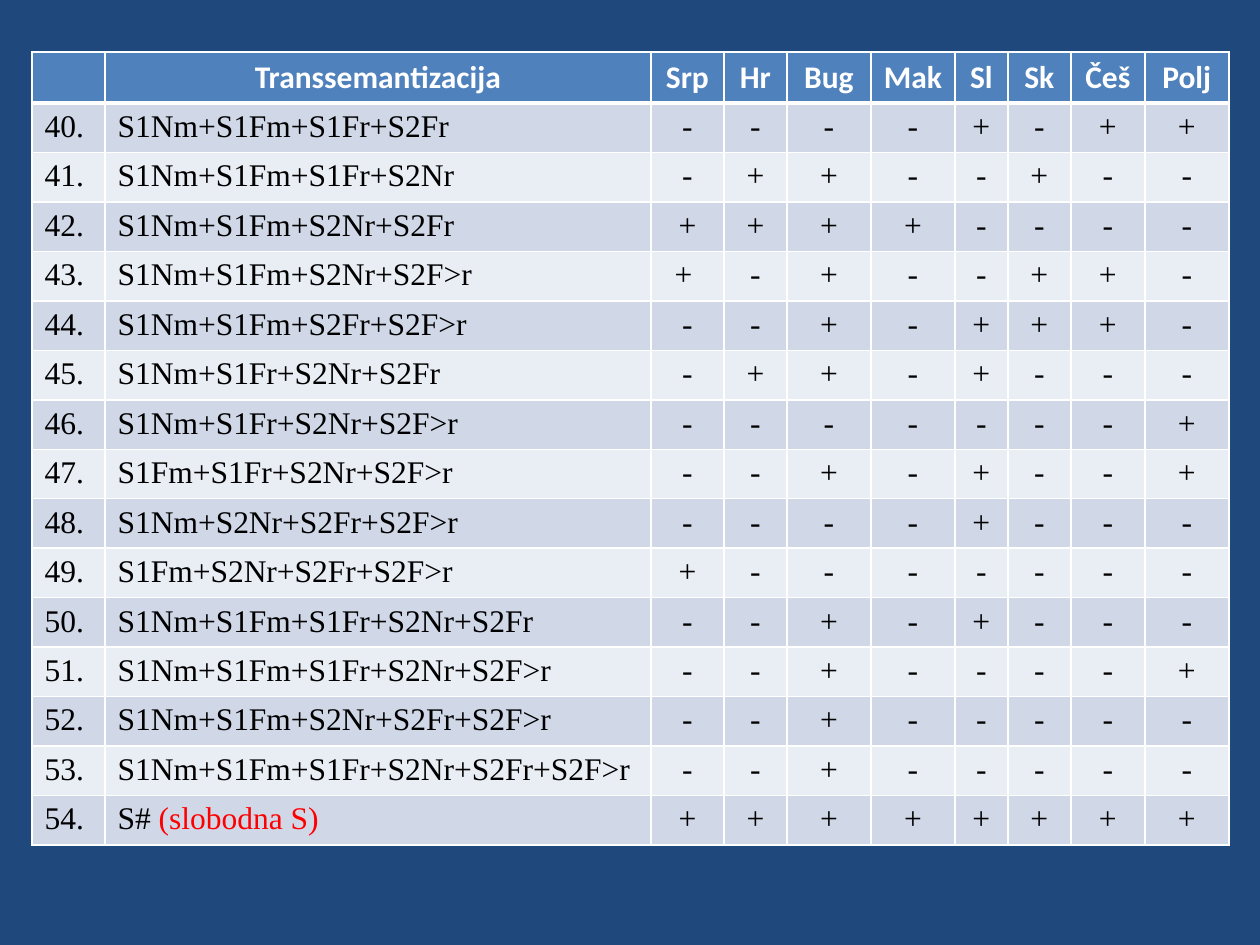
from lxml.etree import SubElement
from pptx import Presentation
from pptx.dml.color import RGBColor
from pptx.enum.text import PP_ALIGN
from pptx.oxml.ns import qn
from pptx.util import Emu, Pt

HEADER = ["", "Transsemantizacija", "Srp", "Hr", "Bug", "Mak", "Sl", "Sk", "Češ", "Polj"]
FIRST_NUMBER = 40
ROWS = [  # formula, red remark, marks per language
    ("S1Nm+S1Fm+S1Fr+S2Fr", "", "-,-,-,-,+,-,+,+"),
    ("S1Nm+S1Fm+S1Fr+S2Nr", "", "-,+,+,-,-,+,-,-"),
    ("S1Nm+S1Fm+S2Nr+S2Fr", "", "+,+,+,+,-,-,-,-"),
    ("S1Nm+S1Fm+S2Nr+S2F>r", "", "+ ,-,+,-,-,+,+,-"),
    ("S1Nm+S1Fm+S2Fr+S2F>r", "", "-,-,+,-,+,+,+,-"),
    ("S1Nm+S1Fr+S2Nr+S2Fr", "", "-,+,+,-,+,-,-,-"),
    ("S1Nm+S1Fr+S2Nr+S2F>r", "", "-,-,-,-,-,-,-,+"),
    ("S1Fm+S1Fr+S2Nr+S2F>r", "", "-,-,+,-,+,-,-,+"),
    ("S1Nm+S2Nr+S2Fr+S2F>r", "", "-,-,-,-,+,-,-,-"),
    ("S1Fm+S2Nr+S2Fr+S2F>r", "", "+,-,-,-,-,-,-,-"),
    ("S1Nm+S1Fm+S1Fr+S2Nr+S2Fr", "", "-,-,+,-,+,-,-,-"),
    ("S1Nm+S1Fm+S1Fr+S2Nr+S2F>r", "", "-,-,+,-,-,-,-,+"),
    ("S1Nm+S1Fm+S2Nr+S2Fr+S2F>r", "", "-,-,+,-,-,-,-,-"),
    ("S1Nm+S1Fm+S1Fr+S2Nr+S2Fr+S2F>r", "", "-,-,+,-,-,-,-,-"),
    ("S# ", "(slobodna S)", "+,+,+,+,+,+,+,+"),
]

COL_WIDTHS = [73, 546, 73, 63, 84, 84, 53, 63, 74, 84]
LEFT, TOP = 32, 52
HEADER_HEIGHT, BODY_HEIGHT = 51, 742

NAVY = RGBColor(0x1F, 0x49, 0x7D)
BLUE = RGBColor(0x4F, 0x81, 0xBD)
BANDS = [RGBColor(0xD0, 0xD8, 0xE8), RGBColor(0xE9, 0xED, 0xF4)]
WHITE = RGBColor(0xFF, 0xFF, 0xFF)
BLACK = RGBColor(0, 0, 0)
RED = RGBColor(0xFF, 0, 0)


def px(n):
    return Emu(round(n * 914400 / 126))


def set_borders(cell, top, bottom):
    tc_pr = cell._tc.get_or_add_tcPr()
    sides = [("a:lnL", 1), ("a:lnR", 1), ("a:lnT", top), ("a:lnB", bottom)]
    for i, (tag, width) in enumerate(sides):
        ln = SubElement(tc_pr, qn(tag), w=str(Pt(width)))
        fill = SubElement(ln, qn("a:solidFill"))
        SubElement(fill, qn("a:srgbClr"), val=str(WHITE))
        tc_pr.insert(i, ln)  # lines precede the fill


def format_run(r, font, color, bold):
    r.font.name, r.font.size = font, Pt(18)
    r.font.color.rgb, r.font.bold = color, bold


def fill_cell(cell, row, col, text, remark=""):
    header = row == 0
    cell.fill.solid()
    cell.fill.fore_color.rgb = BLUE if header else BANDS[(row - 1) % 2]
    set_borders(cell, top=3 if row == 1 else 1, bottom=3 if header else 1)
    p = cell.text_frame.paragraphs[0]
    p.text = text
    p.font.size = Pt(18)
    if header or col > 1:
        p.alignment = PP_ALIGN.CENTER
    font, color = ("Calibri", WHITE) if header else ("Times New Roman", BLACK)
    for r in p.runs:
        format_run(r, font, color, header)
    if remark:
        r = p.add_run()
        r.text = remark
        format_run(r, font, RED, False)


def main():
    prs = Presentation()
    prs.slide_width, prs.slide_height = px(1260), px(945)
    s = prs.slides.add_slide(prs.slide_layouts[6])
    s.background.fill.solid()
    s.background.fill.fore_color.rgb = NAVY

    table = s.shapes.add_table(
        len(ROWS) + 1, len(HEADER), px(LEFT), px(TOP),
        px(sum(COL_WIDTHS)), px(HEADER_HEIGHT + BODY_HEIGHT)).table
    for column, width in zip(table.columns, COL_WIDTHS):
        column.width = px(width)
    for i, row in enumerate(table.rows):
        row.height = px(BODY_HEIGHT / len(ROWS) if i else HEADER_HEIGHT)

    for col, text in enumerate(HEADER):
        fill_cell(table.cell(0, col), 0, col, text)
    for row, (formula, remark, marks) in enumerate(ROWS, 1):
        texts = [f"{FIRST_NUMBER + row - 1}.", formula, *marks.split(",")]
        for col, text in enumerate(texts):
            fill_cell(table.cell(row, col), row, col, text, remark if col == 1 else "")
    prs.save("out.pptx")


if __name__ == "__main__":
    main()
